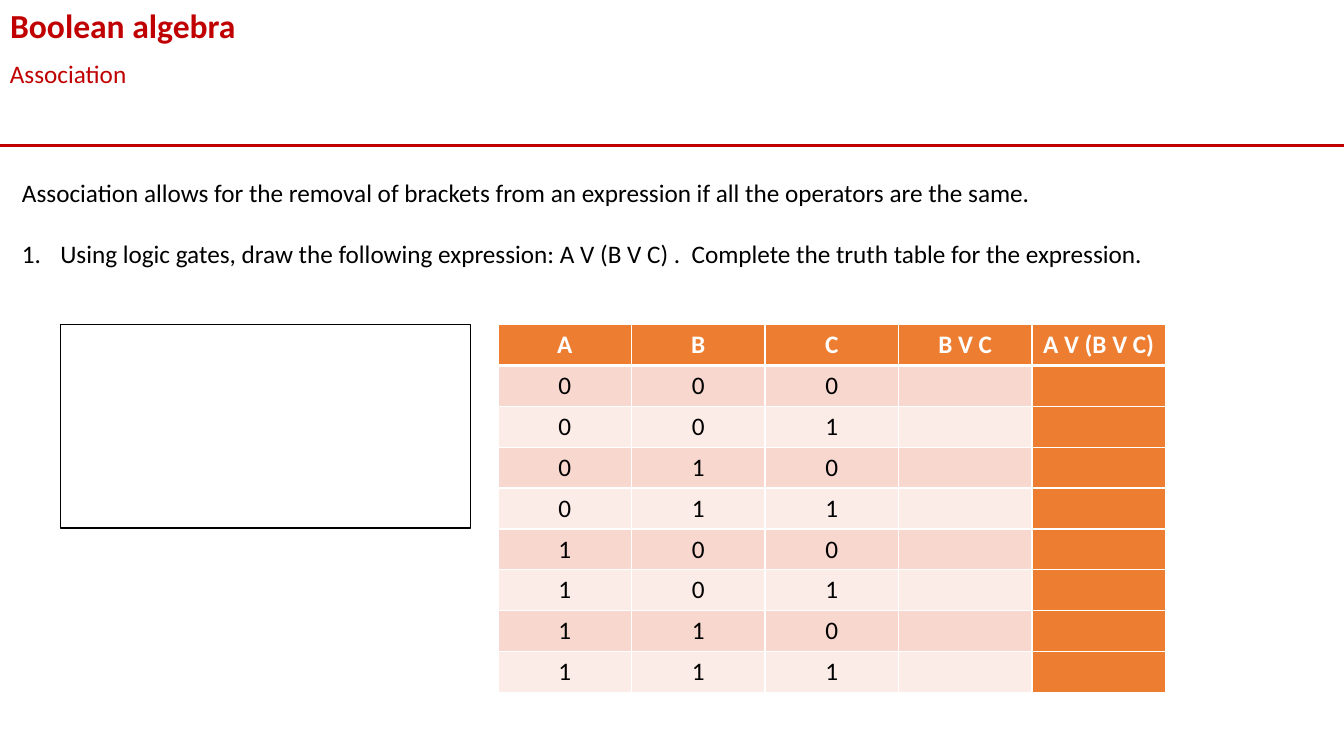
from dataclasses import dataclass
from itertools import product

from lxml.etree import SubElement
from pptx import Presentation
from pptx.dml.color import RGBColor
from pptx.enum.shapes import MSO_CONNECTOR, MSO_SHAPE
from pptx.enum.text import MSO_ANCHOR, MSO_AUTO_SIZE, PP_ALIGN
from pptx.oxml.ns import qn
from pptx.util import Pt

TITLE = "Boolean algebra"
SUBTITLE = "Association"
EXPLANATION = ("Association allows for the removal of brackets from an expression "
               "if all the operators are the same.")
TASK = ("Using logic gates, draw the following expression: A V (B V C) .  "
        "Complete the truth table for the expression.")
HEADINGS = ["A", "B", "C", "B V C", "A V (B V C)"]
INPUTS = list(product("01", repeat=3))
TRUTH_TABLE = [HEADINGS] + [[*row, "", ""] for row in INPUTS]

PX = 9144  # 100 px to the inch
SLIDE_SIZE = (1333, 750)
TITLE_BOX = (0, 0, 1333, 50)
SUBTITLE_BOX = (0, 53, 1333, 40)
RULE_TOP = 144
BODY_BOX = (12, 171, 1307, 101)
TABLE_BOX = (494, 322, 662, 365)
DRAWING_BOX = (60, 322, 407, 202)
LIST_INDENT = 38


@dataclass(frozen=True)
class Theme:
    font: str = "Calibri"
    red: str = "C00000"
    black: str = "000000"
    white: str = "FFFFFF"
    orange: str = "ED7D31"
    bands: tuple = ("F8D7CE", "FCECE8")
    title_size: int = 24
    text_size: int = 18


THEME = Theme()


def px(*lengths):
    return [length * PX for length in lengths]


def write(paragraph, text, color=THEME.black, size=THEME.text_size, bold=False,
          align=PP_ALIGN.LEFT, before=0):
    paragraph.alignment = align
    paragraph.space_before = Pt(before)
    paragraph.font.size = Pt(size)
    if text:
        font = paragraph.add_run().font
        paragraph.runs[0].text = text
        font.name = THEME.font
        font.size = Pt(size)
        font.bold = bold
        font.color.rgb = RGBColor.from_string(color)


def number_paragraph(paragraph):
    properties = paragraph._p.get_or_add_pPr()
    properties.set("marL", str(LIST_INDENT * PX))
    properties.set("indent", str(-LIST_INDENT * PX))
    SubElement(properties, qn("a:buFont"), typeface="+mj-lt")
    SubElement(properties, qn("a:buAutoNum"), type="arabicPeriod")


def set_borders(cell, widths):
    """Draw white borders; widths are points for left, right, top, bottom."""
    properties = cell._tc.get_or_add_tcPr()
    for side, width in zip("LRTB", widths):
        line = SubElement(properties, qn(f"a:ln{side}"), w=str(Pt(width)))
        fill = SubElement(line, qn("a:solidFill"))
        SubElement(fill, qn("a:srgbClr"), val=THEME.white)


def add_text_box(slide, box):
    frame = slide.shapes.add_textbox(*px(*box)).text_frame
    frame.word_wrap = True
    return frame


def add_heading(slide):
    title = slide.shapes.title
    title.left, title.top, title.width, title.height = px(*TITLE_BOX)
    frame = title.text_frame
    frame.vertical_anchor = MSO_ANCHOR.TOP
    frame.auto_size = MSO_AUTO_SIZE.NONE
    write(frame.paragraphs[0], TITLE, THEME.red, THEME.title_size, bold=True)
    write(add_text_box(slide, SUBTITLE_BOX).paragraphs[0], SUBTITLE, THEME.red)
    rule = slide.shapes.add_connector(
        MSO_CONNECTOR.STRAIGHT, *px(0, RULE_TOP, SLIDE_SIZE[0], RULE_TOP))
    rule.line.color.rgb = RGBColor.from_string(THEME.red)
    rule.line.width = Pt(2.25)
    SubElement(rule._element.spPr, qn("a:effectLst"))


def add_body(slide):
    frame = add_text_box(slide, BODY_BOX)
    write(frame.paragraphs[0], EXPLANATION)
    task = frame.add_paragraph()
    write(task, TASK, before=22)
    properties = task._p.get_or_add_pPr()
    defaults = properties.find(qn("a:defRPr"))
    if defaults is not None:
        properties.remove(defaults)
    number_paragraph(task)


def add_truth_table(slide):
    rows, columns = len(TRUTH_TABLE), len(HEADINGS)
    width, height = px(*TABLE_BOX[2:])
    table = slide.shapes.add_table(rows, columns, *px(*TABLE_BOX)).table
    for column in table.columns:
        column.width = width // columns
    for row in table.rows:
        row.height = height // rows
    for row, values in enumerate(TRUTH_TABLE):
        for column, value in enumerate(values):
            cell = table.cell(row, column)
            heading = row == 0
            solid = heading or column == columns - 1
            set_borders(cell, (1, 1, 3 if row == 1 else 1, 3 if heading else 1))
            cell.fill.solid()
            cell.fill.fore_color.rgb = RGBColor.from_string(
                THEME.orange if solid else THEME.bands[(row - 1) % 2])
            write(cell.text_frame.paragraphs[0], value,
                  THEME.white if heading else THEME.black,
                  bold=heading, align=PP_ALIGN.CENTER)


def add_drawing_area(slide):
    area = slide.shapes.add_shape(MSO_SHAPE.RECTANGLE, *px(*DRAWING_BOX))
    area.shadow.inherit = False
    area.fill.background()
    area.line.color.rgb = RGBColor.from_string(THEME.black)
    area.line.width = Pt(1)


def main():
    presentation = Presentation()
    presentation.slide_width, presentation.slide_height = px(*SLIDE_SIZE)
    slide = presentation.slides.add_slide(presentation.slide_layouts[5])
    add_heading(slide)
    add_body(slide)
    add_truth_table(slide)
    add_drawing_area(slide)
    presentation.save("out.pptx")


if __name__ == "__main__":
    main()
